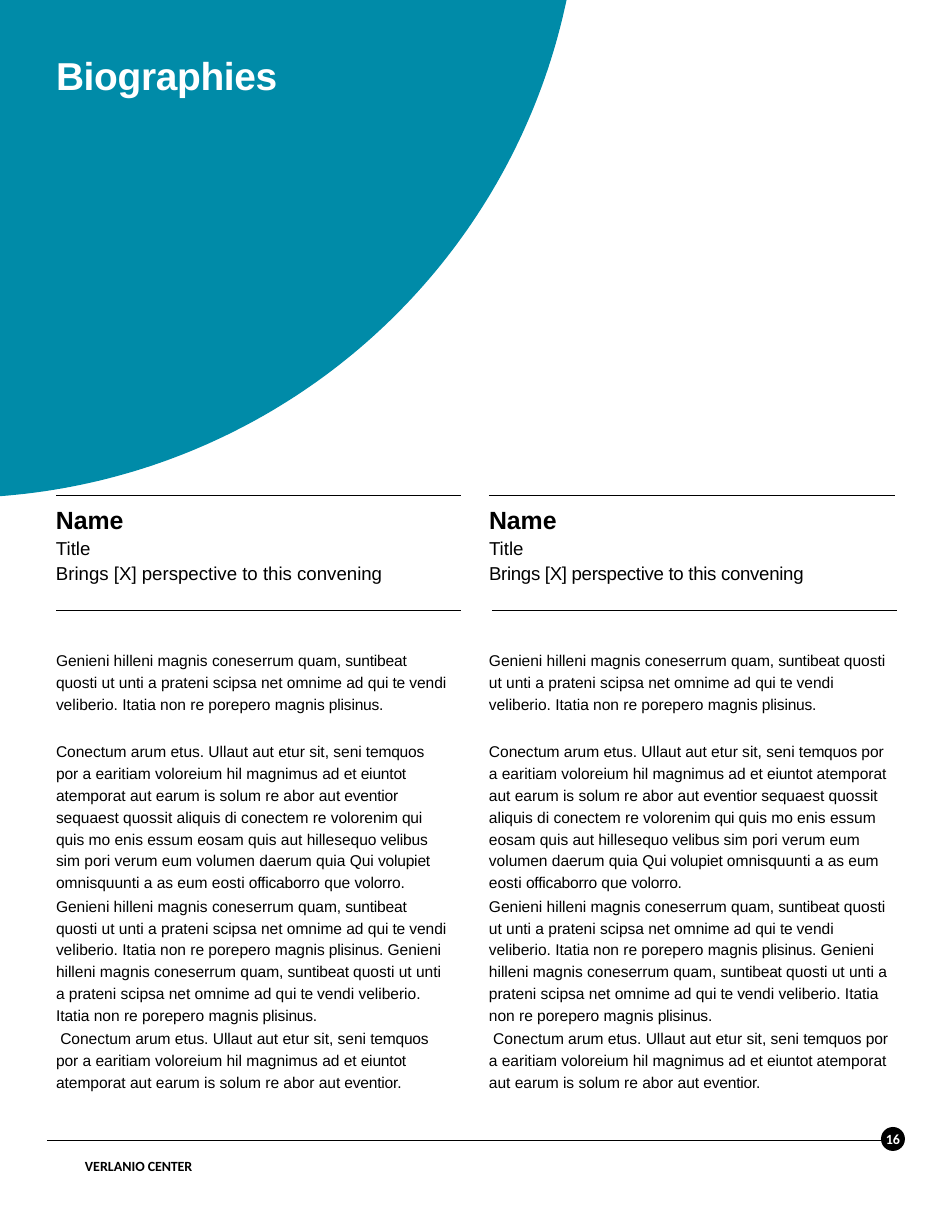
from math import acos, asin, cos, sin
from pptx import Presentation
from pptx.dml.color import RGBColor
from pptx.enum.shapes import MSO_CONNECTOR as Conn, MSO_SHAPE as Shape
from pptx.enum.text import MSO_ANCHOR as Anchor, PP_ALIGN as Align
from pptx.oxml.ns import qn
from pptx.util import Pt

PX = 914400 / 112
TEAL, BLACK, WHITE = "008BA8", "000000", "FFFFFF"

# Every second piece between bars is set with tighter letters.
INTRO = ("Genieni hilleni magnis coneserrum quam, |suntibeat |quosti ut unti a prateni "
         "scipsa net omnime ad qui |te |vendi veliberio. Itatia non re porepero magnis |plisinus.")
OPEN = ("Conectum arum etus. Ullaut aut etur sit, seni |temquos |por a earitiam voloreium "
        "hil magnimus ad et |eiuntot |atemporat aut earum is solum re abor aut |eventior")
REST = (" |sequaest quossit aliquis di conectem re volorenim |qui |quis mo enis essum eosam "
        "quis aut hillesequo |velibus |sim pori verum eum volumen daerum quia Qui |volupiet "
        "|omnisquunti a as eum eosti |officaborro| que |volorro.")
BODY = [(INTRO, 0), (OPEN + REST, 16.25), (INTRO + " |" + INTRO, 1), (" " + OPEN + ".", 1)]
PEOPLE = [
    dict(left=56, head=365, body=394, height=540, tight=0),
    dict(left=489, head=352, body=406, height=469, tight=-20),
]
CARD = [("Name", 16, True), ("Title", 12, False),
        ("Brings [X] perspective to this convening", 12, False)]
RULES = [(56, 461, 495, 0.5), (489, 895, 495, 0.5), (56, 461, 610, 0.5),
         (492, 897, 610, 0.5), (47, 884, 1140, 0.25)]
ARC = dict(x=-47, y=-129, r=627, steps=90)


def px(n):
    """Turn px into EMU."""
    return round(n * PX)


def rgb(code):
    """Make a colour from a hex string."""
    return RGBColor.from_string(code)


def paint(shape, color):
    """Give a shape a flat fill without line or shadow."""
    shape.shadow.inherit = False
    shape.fill.solid()
    shape.fill.fore_color.rgb = rgb(color)
    shape.line.fill.background()


def style(run, size, color=BLACK, bold=False, name="Arial", gap=0):
    """Set the font of a run, with letter spacing in hundredths of a point."""
    font = run.font
    font.size, font.bold, font.name = Pt(size), bold, name
    font.color.rgb = rgb(color)
    if gap:
        run._r.get_or_add_rPr().set("spc", str(gap))


def bare(frame, wrap=True):
    """Clear the margins of a text frame."""
    frame.margin_left = frame.margin_right = frame.margin_top = frame.margin_bottom = 0
    frame.word_wrap = wrap
    return frame


def box(slide, x, y, w, h):
    """Add an empty text box and return its frame."""
    return bare(slide.shapes.add_textbox(px(x), px(y), px(w), px(h)).text_frame)


def lines(frame, count):
    """Return the given number of paragraphs of a frame."""
    return [frame.paragraphs[0]] + [frame.add_paragraph() for _ in range(count - 1)]


def pieces(para, text, **look):
    """Fill a paragraph with runs that alternate plain and tight."""
    for i, part in enumerate(text.split("|")):
        run = para.add_run()
        run.text = part
        gap = (-20 if len(part.strip()) < 4 else -10) if i % 2 else 0
        style(run, gap=gap, **look)


def rule(slide, x1, x2, y, width):
    """Draw a level black line."""
    line = slide.shapes.add_connector(Conn.STRAIGHT, px(x1), px(y), px(x2), px(y))
    line.line.color.rgb = rgb(BLACK)
    line.line.width = Pt(width)
    props = line._element.spPr
    props.append(props.makeelement(qn("a:effectLst"), {}))


def curve(slide):
    """Draw the part of the large disc that lies on the page."""
    x, y, r, n = ARC.values()
    start, end = asin(-y / r), acos(-x / r)
    turns = [start + (end - start) * i / n for i in range(n + 1)]
    points = [(px(x + r * cos(t)), px(y + r * sin(t))) for t in turns]
    form = slide.shapes.build_freeform(0, 0)
    form.add_line_segments(points, close=True)
    paint(form.convert_to_shape(), TEAL)


def person(slide, left, head, body, height, tight):
    """Add the name card and the biography of one person."""
    frame = box(slide, left, 505, head, 80)
    for i, (para, (text, size, bold)) in enumerate(zip(lines(frame, len(CARD)), CARD)):
        para.text = text
        if i:
            para.line_spacing, para.space_before = Pt(14), Pt(1.9)
        style(para.runs[0], size, bold=bold, gap=tight if i == 2 else 0)
    frame = box(slide, left, 648, body, height)
    for para, (text, before) in zip(lines(frame, len(BODY)), BODY):
        para.line_spacing, para.space_before = 1.17, Pt(before)
        pieces(para, text, size=10)


def main():
    """Build the biographies page."""
    deck = Presentation()
    deck.slide_width, deck.slide_height = px(952), px(1232)
    slide = deck.slides.add_slide(deck.slide_layouts[6])
    curve(slide)
    for item in RULES:
        rule(slide, *item)
    para = box(slide, 56, 52, 355, 48).paragraphs[0]
    para.text = "Biographies"
    style(para.runs[0], 25, WHITE, True, gap=-20)
    for item in PEOPLE:
        person(slide, **item)
    foot = box(slide, 85, 1158, 130, 21).paragraphs[0]
    pieces(foot, "VERLANIO |CENTER", size=9, bold=True, name="Calibri")
    dot = slide.shapes.add_shape(Shape.OVAL, px(881), px(1127), px(24), px(24))
    paint(dot, BLACK)
    frame = bare(dot.text_frame, False)
    frame.vertical_anchor = Anchor.MIDDLE
    frame.text = "16"
    frame.paragraphs[0].alignment = Align.CENTER
    style(frame.paragraphs[0].runs[0], 9, WHITE, True, "Calibri")
    deck.save("out.pptx")


if __name__ == "__main__":
    main()
